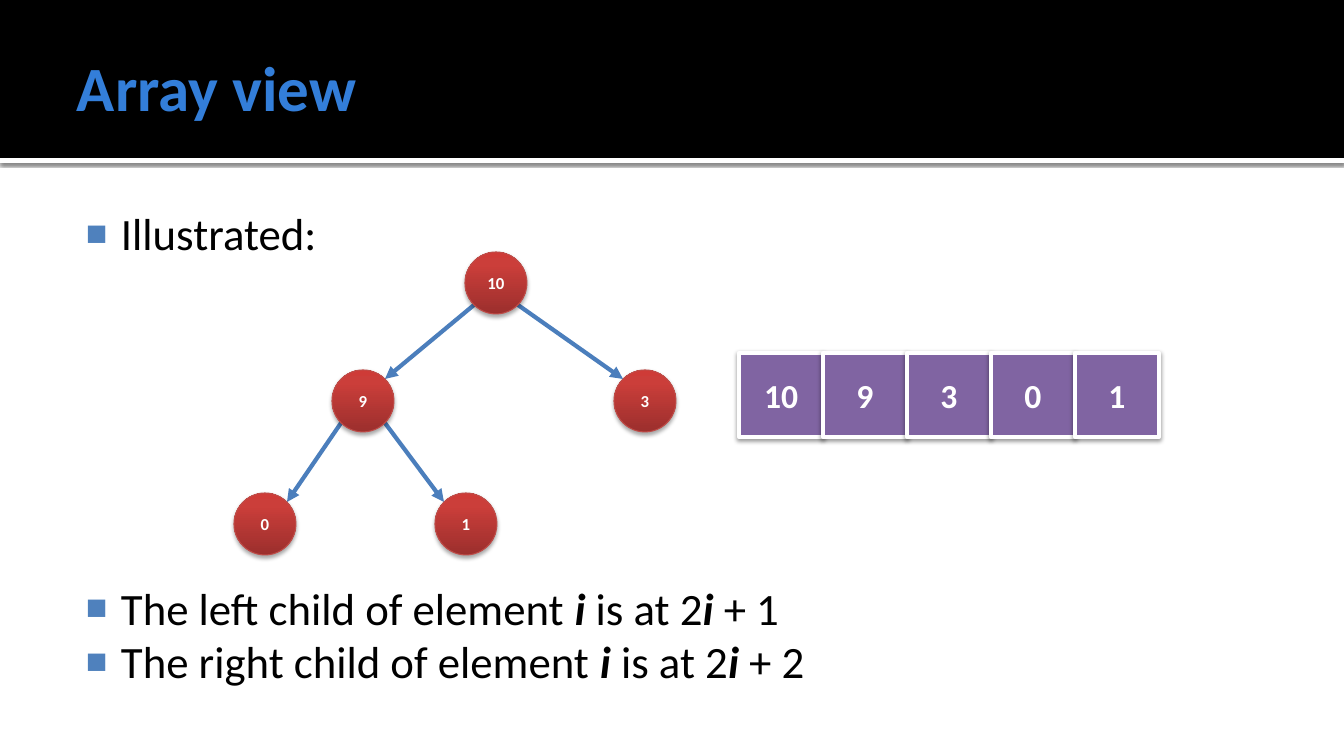
from lxml import etree
from pptx import Presentation
from pptx.dml.color import RGBColor
from pptx.enum.shapes import MSO_CONNECTOR, MSO_SHAPE
from pptx.enum.text import MSO_ANCHOR, PP_ALIGN
from pptx.oxml import parse_xml
from pptx.oxml.ns import nsdecls, qn
from pptx.util import Emu, Pt

# Content
TITLE = "Array view"
BULLETS = [  # (space before in points, runs); *i* marks bold italic
    (0, ["Illustrated:"]),
    (229, ["The left child of element ", "*i*", " is at 2", "*i*", " + 1"]),
    (0, ["The right child of element ", "*i*", " is at 2", "*i*", " + 2"]),
]
HEAP = [10, 9, 3, 0, 1]
CENTRES = [(496, 283), (363, 401), (645, 401), (265, 524), (466, 524)]

# Look
COLORS = {"bar": "000000", "rule": "FFFFFF", "title": "337ED9", "text": "000000",
          "bullet": "4F81BD", "arrow": "4B7EBC", "node_line": "BF4C48",
          "cell": "8064A2", "white": "FFFFFF"}
NODE_STOPS = [(0, "9C2F2D"), (80, "CB3E3A"), (100, "CE3B37")]
SHADOWS = {"rule": (60, 2.5, 0.8), "node": (35, 3.1, 1.8), "cell": (38, 3.1, 1.6)}
TITLE_FONT = {"size": Pt(45), "bold": True}
BODY_FONT = {"size": Pt(32), "bold": False, "italic": False}
NODE_FONT = {"size": Pt(12), "bold": True}
CELL_FONT = {"size": Pt(24), "bold": True}

# Geometry in px
W, H, BAR_H, RULE_H = 1344, 756, 158, 5
NODE, CELL = 62, 84
ARRAY_X, ARRAY_Y = 739, 353
SCALE = 12192000 / W


def px(n):
    return Emu(round(n * SCALE))


def rgb(name):
    return RGBColor.from_string(COLORS[name])


def style(font, values, color):
    for key, value in {"name": "Calibri", **values}.items():
        setattr(font, key, value)
    font.color.rgb = rgb(color)


def add_shadow(sp, kind):
    alpha, blur, dist = SHADOWS[kind]
    sp.shadow.inherit = False
    effects = sp._element.spPr.find(qn("a:effectLst"))
    effects.append(parse_xml(
        f'<a:outerShdw {nsdecls("a")} blurRad="{Pt(blur)}" dist="{Pt(dist)}" '
        f'dir="5400000" rotWithShape="0"><a:srgbClr val="000000">'
        f'<a:alpha val="{alpha * 1000}"/></a:srgbClr></a:outerShdw>'))


def add_box(shapes, kind, x, y, w, h, fill=None, line=None, width=0):
    sp = shapes.add_shape(kind, px(x), px(y), px(w), px(h))
    sp.shadow.inherit = False
    if fill:
        sp.fill.solid()
        sp.fill.fore_color.rgb = rgb(fill)
    if line:
        sp.line.color.rgb = rgb(line)
        sp.line.width = Pt(width)
    else:
        sp.line.fill.background()
    return sp


def add_label(sp, text, font):
    tf = sp.text_frame
    tf.margin_left = tf.margin_right = tf.margin_top = tf.margin_bottom = 0
    tf.vertical_anchor = MSO_ANCHOR.MIDDLE
    tf.word_wrap = True
    p = tf.paragraphs[0]
    p.alignment = PP_ALIGN.CENTER
    r = p.add_run()
    r.text = str(text)
    style(r.font, font, "white")


def add_textbox(s, x, y, w, h, margins):
    tf = s.shapes.add_textbox(px(x), px(y), px(w), px(h)).text_frame
    tf.word_wrap = True
    for side, value in zip(("left", "top", "right", "bottom"), margins):
        setattr(tf, f"margin_{side}", px(value))
    return tf


def add_bullet(p):
    pPr = p._p.get_or_add_pPr()
    pPr.set("marL", str(px(48)))
    pPr.set("indent", str(px(-35)))
    color = etree.SubElement(pPr, qn("a:buClr"))
    etree.SubElement(color, qn("a:srgbClr"), val=COLORS["bullet"])
    etree.SubElement(pPr, qn("a:buSzPct"), val="80000")
    etree.SubElement(pPr, qn("a:buFont"), typeface="Arial")
    etree.SubElement(pPr, qn("a:buChar"), char="■")


def add_arrow(shapes, parent, child):
    (x1, y1), (x2, y2) = CENTRES[parent], CENTRES[child]
    d = NODE / 2 * 0.71  # diagonal point on the circle
    side = 1 if x2 > x1 else -1
    c = shapes.add_connector(MSO_CONNECTOR.STRAIGHT, px(x1 + side * d), px(y1 + d),
                             px(x2 - side * d), px(y2 - d))
    c.line.color.rgb = rgb("arrow")
    c.line.width = Pt(3)
    etree.SubElement(c.line._get_or_add_ln(), qn("a:tailEnd"), type="triangle")
    etree.SubElement(c._element.spPr, qn("a:effectLst"))


def add_node(shapes, centre, value):
    x, y = centre
    sp = add_box(shapes, MSO_SHAPE.OVAL, x - NODE / 2, y - NODE / 2, NODE, NODE,
                 line="node_line", width=0.75)
    sp.fill.gradient()
    sp.fill.gradient_angle = 90
    stops = sp._element.spPr.find(".//" + qn("a:gsLst"))
    for gs in list(stops):
        stops.remove(gs)
    for pos, color in NODE_STOPS:
        gs = etree.SubElement(stops, qn("a:gs"), pos=str(pos * 1000))
        etree.SubElement(gs, qn("a:srgbClr"), val=color)
    add_shadow(sp, "node")
    add_label(sp, value, NODE_FONT)


def main():
    prs = Presentation()
    prs.slide_width, prs.slide_height = px(W), px(H)
    s = prs.slides.add_slide(prs.slide_layouts[6])

    # Header band
    rule = add_box(s.shapes, MSO_SHAPE.RECTANGLE, 0, BAR_H, W, RULE_H, "rule")
    add_shadow(rule, "rule")
    add_box(s.shapes, MSO_SHAPE.RECTANGLE, 0, 0, W, BAR_H, "bar")
    tf = add_textbox(s, 67, 17, 1210, 138, (10, 5, 5, 5))
    tf.vertical_anchor = MSO_ANCHOR.MIDDLE
    r = tf.paragraphs[0].add_run()
    r.text = TITLE
    style(r.font, TITLE_FONT, "title")

    # Bullets
    tf = add_textbox(s, 67, 196, 1210, 510, (6, 10, 10, 5))
    for i, (space, runs) in enumerate(BULLETS):
        p = tf.add_paragraph() if i else tf.paragraphs[0]
        add_bullet(p)
        if space:
            p.space_before = Pt(space)
        for text in runs:
            r = p.add_run()
            r.text = text.strip("*")
            strong = text.startswith("*")
            style(r.font, {**BODY_FONT, "bold": strong, "italic": strong}, "text")

    # Heap as a tree: the parent of k is (k - 1) // 2
    tree = s.shapes.add_group_shape().shapes
    for k in range(1, len(HEAP)):
        add_arrow(tree, (k - 1) // 2, k)
    for centre, value in zip(CENTRES, HEAP):
        add_node(tree, centre, value)

    # Heap as an array
    array = s.shapes.add_group_shape().shapes
    for k, value in enumerate(HEAP):
        sp = add_box(array, MSO_SHAPE.RECTANGLE, ARRAY_X + k * CELL, ARRAY_Y,
                     CELL, CELL, "cell", "white", 3)
        add_shadow(sp, "cell")
        add_label(sp, value, CELL_FONT)

    prs.save("out.pptx")


if __name__ == "__main__":
    main()
